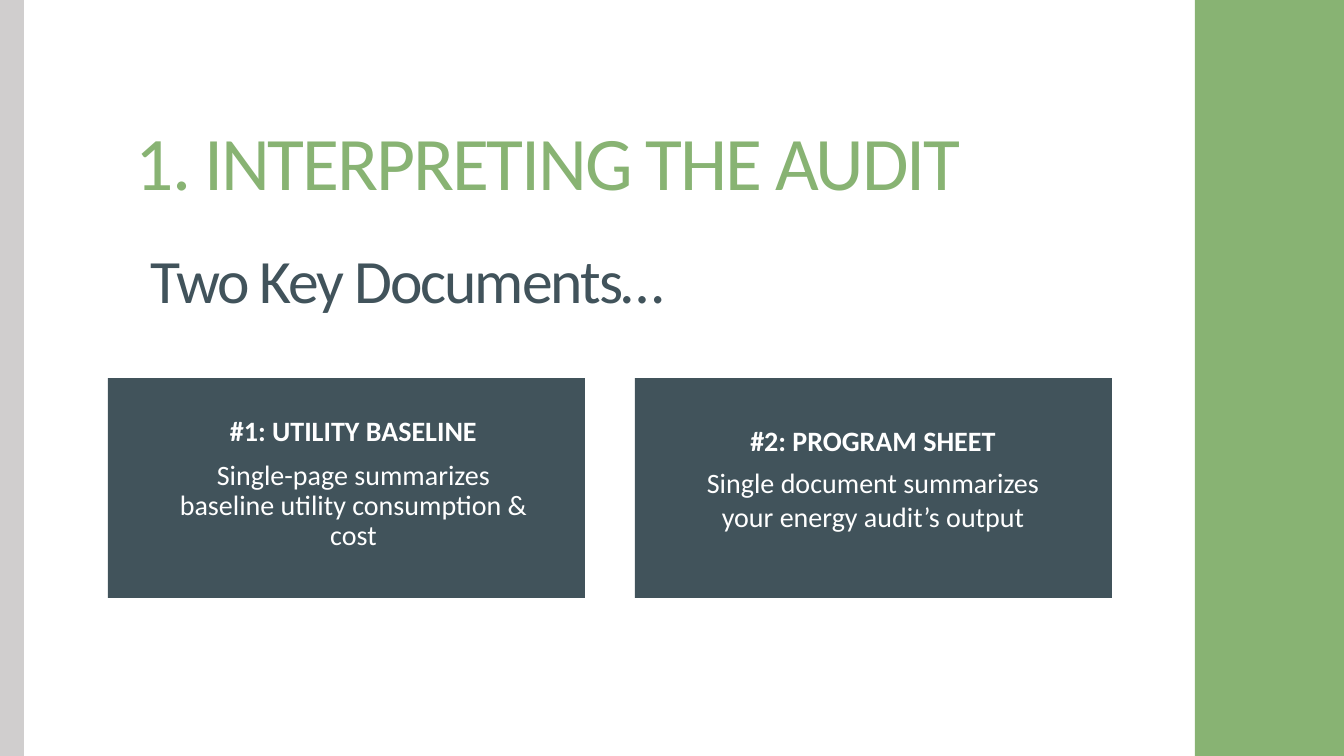
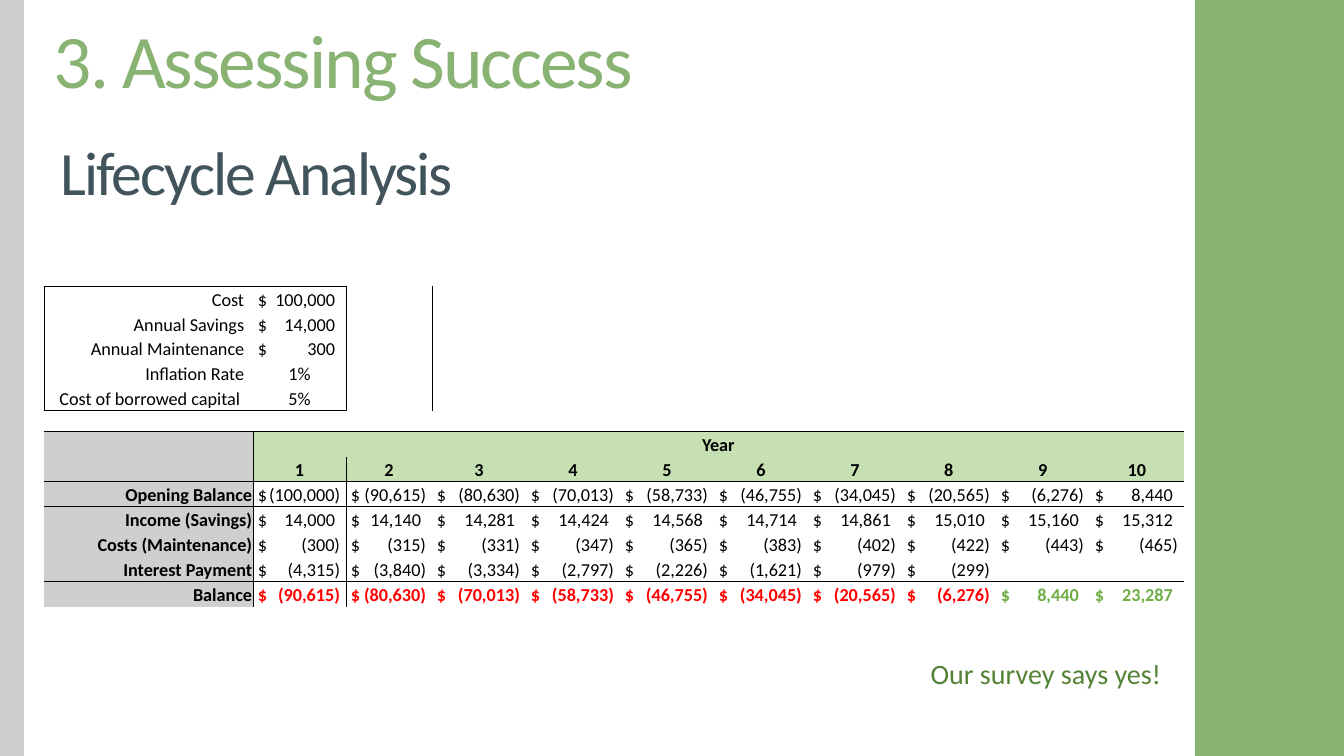
"""Build two energy audit slides: the key documents and the lifecycle analysis."""
import lxml.etree
import pptx
import pptx.dml.color
import pptx.enum.shapes
import pptx.enum.text
import pptx.oxml.ns
import pptx.util

PX = 9071
ALIGN = pptx.enum.text.PP_ALIGN
ANCHOR = pptx.enum.text.MSO_ANCHOR
qn = pptx.oxml.ns.qn
rgb = pptx.dml.color.RGBColor.from_string


class Theme:
    """Colours, type sizes and text styles of the deck."""
    font = "Calibri"
    green, slate, grey = rgb("88B373"), rgb("41535B"), rgb("D0CECE")
    white, black = rgb("FFFFFF"), rgb("000000")
    header, loss, gain, verdict = rgb("C6E0B4"), rgb("FF0000"), rgb("70AD47"), rgb("548235")
    title_size, subtitle_size, body_size, table_size, empty_size = 54, 44, 20, 13, 10
    title = {"size": title_size, "color": green, "spacing": -150}
    subtitle = {"size": subtitle_size, "color": slate, "spacing": -150}
    card = {"size": body_size, "color": white}
    note = {"size": body_size, "color": verdict}
    cell = {"size": table_size, "color": black}


def write(para, text, style, **para_formats):
    """Put one styled run into a paragraph."""
    for name, value in para_formats.items():
        setattr(para, name, value)
    span = para.add_run()
    span.text = text
    font_formats = {"name": Theme.font, "size": pptx.util.Pt(style["size"]),
                    "bold": style.get("bold", False)}
    for name, value in font_formats.items():
        setattr(span.font, name, value)
    span.font.color.rgb = style["color"]
    if "spacing" in style:
        span.font._element.set("spc", str(style["spacing"]))


def add_text(page, rect, lines, **para_formats):
    """Add a wrapping text box with one paragraph per (text, style) pair."""
    box = page.shapes.add_textbox(*(n * PX for n in rect))
    box.text_frame.word_wrap = True
    for index, (text, style) in enumerate(lines):
        para = box.text_frame.add_paragraph() if index else box.text_frame.paragraphs[0]
        write(para, text, style, **para_formats)


deck = pptx.Presentation()
deck.slide_width, deck.slide_height = 1344 * PX, 756 * PX

bands = [((1195, 0, 149, 756), Theme.green), ((-2, 0, 26, 756), Theme.grey)]
cards = [((left, 378, 477, 220), Theme.slate) for left in (108, 635)]
outlines = [
    ("1. INTERPRETING THE AUDIT", (126, 120), "Two Key Documents…", (141, 245), cards),
    ("3. Assessing Success", (44, 18), "Lifecycle Analysis", (51, 137), []),
]
pages = []
for title, title_at, subtitle, subtitle_at, panels in outlines:
    page = deck.slides.add_slide(deck.slide_layouts[6])
    pages.append(page)
    for rect, colour in panels + bands:
        shape = page.shapes.add_shape(pptx.enum.shapes.MSO_SHAPE.RECTANGLE,
                                      *(n * PX for n in rect))
        shape.shadow.inherit = False
        shape.fill.solid()
        shape.fill.fore_color.rgb = colour
        shape.line.fill.background()
    add_text(page, (*subtitle_at, 941, 77), [(subtitle, Theme.subtitle)], line_spacing=0.9)
    add_text(page, (*title_at, 956, 93), [(title, Theme.title)], line_spacing=0.9)

documents_page, lifecycle_page = pages

documents = [
    ((169, 412, 369, 170), "#1: UTILITY BASELINE",
     "Single-page summarizes baseline utility consumption & cost", 0.9, 10),
    ((677, 419, 392, 120), "#2: PROGRAM SHEET",
     "Single document summarizes your energy audit’s output", 1.0, 6),
]
for rect, heading, summary, line_spacing, gap in documents:
    add_text(documents_page, rect,
             [(heading, {**Theme.card, "bold": True}), (summary, Theme.card)],
             alignment=ALIGN.CENTER, line_spacing=line_spacing,
             space_before=pptx.util.Pt(gap))

add_text(lifecycle_page, (51, 655, 1120, 40), [("Our survey says yes!", Theme.note)],
         alignment=ALIGN.RIGHT, line_spacing=0.9)

table_rows = [
    ["Cost", 100000],
    ["Annual Savings", 14000],
    ["Annual Maintenance", 300],
    ["Inflation Rate", "1%"],
    ["Cost of borrowed capital ", "5%"],
    [],
    ["", "Year"],
    ["", *(str(year) for year in range(1, 11))],
    ["Opening Balance", -100000, -90615, -80630, -70013, -58733,
     -46755, -34045, -20565, -6276, 8440],
    ["Income (Savings)", 14000, 14140, 14281, 14424, 14568,
     14714, 14861, 15010, 15160, 15312],
    ["Costs (Maintenance)", -300, -315, -331, -347, -365, -383, -402, -422, -443, -465],
    ["Interest Payment", -4315, -3840, -3334, -2797, -2226, -1621, -979, -299],
    ["Balance", -90615, -80630, -70013, -58733, -46755,
     -34045, -20565, -6276, 8440, 23287],
]
column_widths = [209, 93, 86] + [94] * 8
row_heights = [25] * 5 + [21] + [25] * 7
spacer_row, year_row, number_row, balance_row = 5, 6, 7, 12

frame = lifecycle_page.shapes.add_table(
    len(row_heights), len(column_widths), 44 * PX, 286 * PX,
    sum(column_widths) * PX, sum(row_heights) * PX)
table = frame.table
table.first_row = table.horz_banding = False
table._tbl.tblPr.find(qn("a:tableStyleId")).text = "{2D5ABB26-0587-4C30-8999-92F81FD0307C}"
for column, width in zip(table.columns, column_widths):
    column.width = width * PX
for row, height in zip(table.rows, row_heights):
    row.height = height * PX
table.cell(year_row, 1).merge(table.cell(year_row, 10))

for r, values in enumerate(table_rows):
    in_box, in_schedule = r < spacer_row, r > spacer_row
    for c, width in enumerate(column_widths):
        cell = table.cell(r, c)
        value = values[c] if c < len(values) else ""
        is_money = isinstance(value, int)
        cell_formats = {
            "margin_left": (5 if is_money else 1) * PX,
            "margin_right": (9 if in_box and c == 0 else 1) * PX,
            "margin_top": 0, "margin_bottom": 0, "vertical_anchor": ANCHOR.BOTTOM}
        for name, setting in cell_formats.items():
            setattr(cell, name, setting)

        properties = cell._tc.get_or_add_tcPr()
        edges = {
            "a:lnL": in_box and c in (0, 2) or in_schedule and c == 1,
            "a:lnR": in_box and c == 1 or in_schedule and c == 0,
            "a:lnT": r in (number_row + 1, balance_row) or r in (0, spacer_row) and c < 2,
            "a:lnB": r in (number_row, balance_row - 1) or r == spacer_row - 1 and c < 2}
        for tag, drawn in edges.items():
            if drawn:
                line = lxml.etree.SubElement(properties, qn(tag), w="6350")
                fill = lxml.etree.SubElement(line, qn("a:solidFill"))
                lxml.etree.SubElement(fill, qn("a:srgbClr"), val=str(Theme.black))

        if in_schedule and (c == 0 or r <= number_row):
            cell.fill.solid()
            cell.fill.fore_color.rgb = Theme.grey if c == 0 else Theme.header
        else:
            cell.fill.background()

        para = cell.text_frame.paragraphs[0]
        if value == "":
            lxml.etree.SubElement(para._p, qn("a:endParaRPr"), sz=str(Theme.empty_size * 100))
            continue
        style = {**Theme.cell,
                 "bold": in_schedule and (c == 0 or r <= number_row or r == balance_row)}
        if not is_money:
            write(para, value, style, alignment=ALIGN.RIGHT if c == 0 else ALIGN.CENTER)
            continue
        if r == balance_row:
            style["color"] = Theme.loss if value < 0 else Theme.gain
        amount = f"({-value:,})" if value < 0 else f"{value:,}"
        write(para, f"$\t{amount}", style, alignment=ALIGN.LEFT)
        stops = lxml.etree.SubElement(para._p.get_or_add_pPr(), qn("a:tabLst"))
        stop = (width - (11 if value < 0 else 16)) * PX
        lxml.etree.SubElement(stops, qn("a:tab"), pos=str(stop), algn="r")

deck.save("out.pptx")
